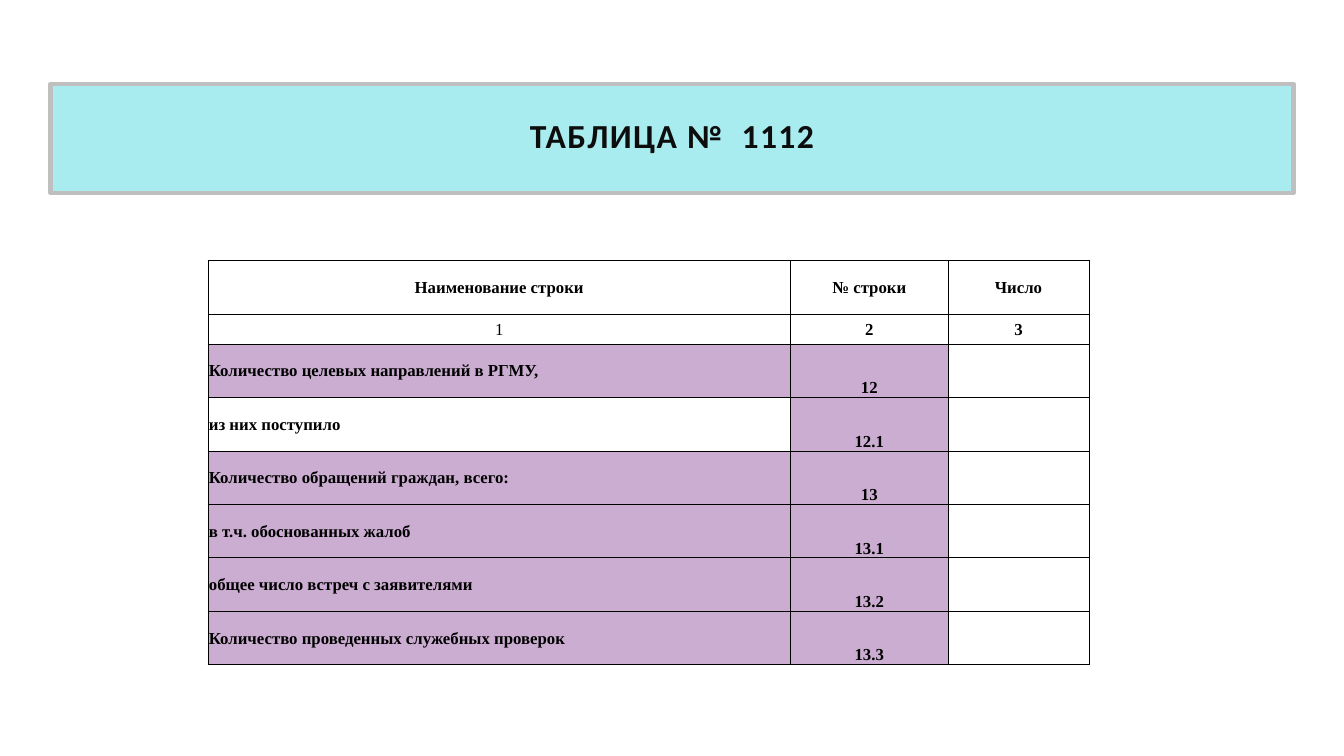
from dataclasses import dataclass

from lxml.etree import SubElement
from pptx import Presentation
from pptx.dml.color import RGBColor
from pptx.enum.shapes import MSO_SHAPE
from pptx.enum.text import MSO_ANCHOR, PP_ALIGN
from pptx.oxml.ns import qn
from pptx.slide import Slide
from pptx.table import _Cell
from pptx.text.text import TextFrame
from pptx.util import Inches, Pt

COLOURS = {
    "banner": "A8ECEF",
    "frame": "BFBFBF",
    "title": "0D0D0D",
    "lilac": "CBADD1",
    "black": "000000",
}
SLIDE_WIDTH, SLIDE_HEIGHT = 13.33, 7.5
COLUMN_WIDTHS = (5.78, 1.56, 1.4)
ROW_HEIGHT, NUMBERING_HEIGHT = 0.53, 0.3


@dataclass(frozen=True)
class Entry:
    name: str
    number: str
    name_filled: bool = True


HEADINGS = ("Наименование строки", "№ строки", "Число")
ENTRIES = (
    Entry("Количество целевых направлений в РГМУ,", "12"),
    Entry("из них поступило", "12.1", name_filled=False),
    Entry("Количество обращений граждан, всего:", "13"),
    Entry("в т.ч. обоснованных жалоб", "13.1"),
    Entry("общее число встреч с заявителями", "13.2"),
    Entry("Количество проведенных служебных проверок", "13.3"),
)


def colour(name: str) -> RGBColor:
    return RGBColor.from_string(COLOURS[name])


def across(share: float) -> int:
    return Inches(SLIDE_WIDTH * share)


def down(share: float) -> int:
    return Inches(SLIDE_HEIGHT * share)


def write(frame: TextFrame, text: str, *, font: str = "Times New Roman",
          size: float = 12, bold: bool = True, ink: str = "black",
          align: PP_ALIGN = PP_ALIGN.CENTER, line_spacing: float | None = None,
          tracking: float = 0) -> None:
    para = frame.paragraphs[0]
    para.alignment = align
    para.line_spacing = line_spacing
    span = para.add_run()
    span.text = text
    span.font.name = font
    span.font.size = Pt(size)
    span.font.bold = bold
    span.font.color.rgb = colour(ink)
    if tracking:
        span.font._element.set("spc", str(round(tracking * 100)))


def style_cell(cell: _Cell, filled: bool = False) -> None:
    cell.margin_left = cell.margin_top = cell.margin_right = Inches(0.01)
    cell.margin_bottom = 0
    cell.vertical_anchor = MSO_ANCHOR.MIDDLE
    properties = cell._tc.get_or_add_tcPr()
    for side in ("lnL", "lnR", "lnT", "lnB"):
        border = SubElement(properties, qn(f"a:{side}"), w=str(Pt(0.5)))
        solid = SubElement(border, qn("a:solidFill"))
        SubElement(solid, qn("a:srgbClr"), val=COLOURS["black"])
    if filled:
        cell.fill.solid()
        cell.fill.fore_color.rgb = colour("lilac")
    else:
        cell.fill.background()


def draw_title(page: Slide) -> None:
    box = page.shapes.add_shape(MSO_SHAPE.RECTANGLE, across(0.0375), down(0.111),
                                across(0.925), down(0.144))
    box.shadow.inherit = False
    box.fill.solid()
    box.fill.fore_color.rgb = colour("banner")
    box.line.color.rgb = colour("frame")
    box.line.width = Pt(3)
    SubElement(box.line._get_or_add_ln(), qn("a:round"))
    box.text_frame.word_wrap = True
    box.text_frame.vertical_anchor = MSO_ANCHOR.MIDDLE
    write(box.text_frame, "ТАБЛИЦА №  1112", font="Calibri", size=24,
          ink="title", line_spacing=0.8, tracking=1)


def draw_table(page: Slide) -> None:
    heights = (ROW_HEIGHT, NUMBERING_HEIGHT) + (ROW_HEIGHT,) * len(ENTRIES)
    table = page.shapes.add_table(
        len(heights), len(COLUMN_WIDTHS), across(0.1547), down(0.3445),
        Inches(sum(COLUMN_WIDTHS)), Inches(sum(heights))).table
    table.first_row = table.horz_banding = False
    for column, width in zip(table.columns, COLUMN_WIDTHS):
        column.width = Inches(width)
    for row, height in zip(table.rows, heights):
        row.height = Inches(height)

    # Headings and column numbers
    for index, heading in enumerate(HEADINGS):
        for row, text in enumerate((heading, str(index + 1))):
            cell = table.cell(row, index)
            style_cell(cell)
            write(cell.text_frame, text, bold=text != "1")

    # Entries, with the last column left open
    for row, entry in enumerate(ENTRIES, start=2):
        name, number, value = (table.cell(row, index) for index in range(3))
        style_cell(name, filled=entry.name_filled)
        write(name.text_frame, entry.name, align=PP_ALIGN.LEFT)
        style_cell(number, filled=True)
        number.vertical_anchor = MSO_ANCHOR.BOTTOM
        write(number.text_frame, entry.number)
        style_cell(value)


def main() -> None:
    deck = Presentation()
    deck.slide_width, deck.slide_height = Inches(SLIDE_WIDTH), Inches(SLIDE_HEIGHT)
    page = deck.slides.add_slide(deck.slide_layouts[6])
    draw_title(page)
    draw_table(page)
    deck.save("out.pptx")


if __name__ == "__main__":
    main()
